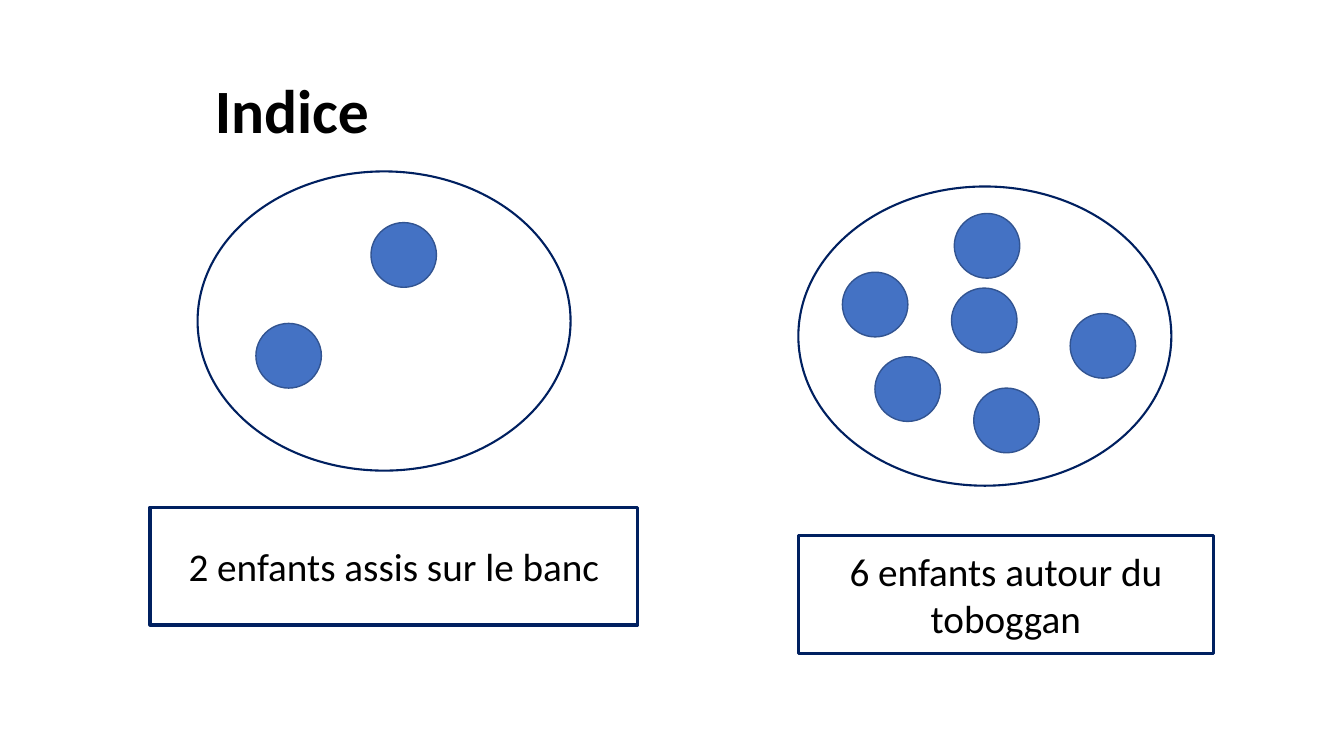
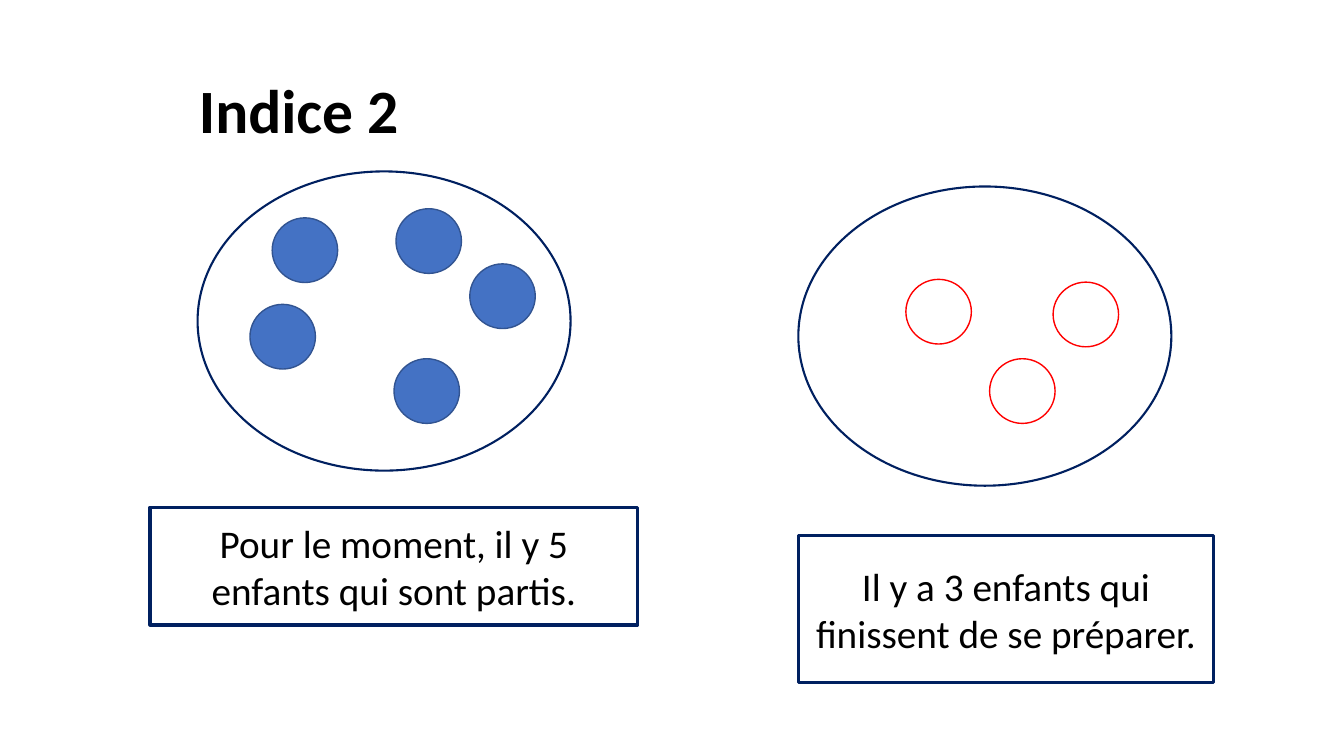
import pptx
import pptx.dml.color
import pptx.enum.shapes
import pptx.enum.text
import pptx.util

Cm = pptx.util.Cm
Pt = pptx.util.Pt
Kind = pptx.enum.shapes.MSO_SHAPE

COLORS = {
    "white": "FFFFFF",
    "black": "000000",
    "navy": "002060",
    "blue": "4472C4",
    "edge": "325491",
    "red": "FF0000",
}
FONT = "Calibri"
DOT = (1.65, 1.63)
RING = (9.4, 7.54)
SIDES = [
    {"ring": (4.98, 4.32), "label": (3.78, 12.78), "width": 12.29},
    {"ring": (20.12, 4.7), "label": (20.12, 13.49), "width": 10.46},
]
PAGES = [
    {
        "title": "Indice",
        "left": 1.99,
        "sets": [
            {
                "text": "2 enfants assis sur le banc",
                "height": 2.97,
                "style": ("blue", "edge"),
                "dots": [(9.35, 5.61), (6.45, 8.15)],
            },
            {
                "text": "6 enfants autour du toboggan",
                "height": 2.97,
                "style": ("blue", "edge"),
                "dots": [(22.05, 8.99), (21.23, 6.86), (24.05, 5.38),
                         (26.97, 7.9), (24.54, 9.78), (23.98, 7.26)],
            },
        ],
    },
    {
        "title": "Indice 2",
        "left": 2.16,
        "sets": [
            {
                "text": "Pour le moment, il y 5 enfants qui sont partis.",
                "height": 2.97,
                "style": ("blue", "edge"),
                "dots": [(6.86, 5.49), (6.3, 7.67), (11.84, 6.65),
                         (9.93, 9.04), (9.98, 5.26)],
            },
            {
                "text": "Il y a 3 enfants qui finissent de se préparer.",
                "height": 3.71,
                "style": ("white", "red"),
                "dots": [(24.94, 9.04), (26.54, 7.11), (22.83, 7.04)],
            },
        ],
    },
]


def draw(slide, kind, spot, size, fill, line, weight):
    shape = slide.shapes.add_shape(kind, *map(Cm, spot + size))
    shape.shadow.inherit = False
    shape.fill.solid()
    shape.fill.fore_color.rgb = pptx.dml.color.RGBColor.from_string(COLORS[fill])
    shape.line.color.rgb = pptx.dml.color.RGBColor.from_string(COLORS[line])
    shape.line.width = Pt(weight)
    return shape


def write(shape, text, size, bold=False):
    frame = shape.text_frame
    frame.word_wrap = True
    frame.vertical_anchor = pptx.enum.text.MSO_ANCHOR.MIDDLE
    frame.text = text
    para = frame.paragraphs[0]
    para.alignment = pptx.enum.text.PP_ALIGN.CENTER
    font = para.runs[0].font
    font.name = FONT
    font.size = Pt(size)
    font.bold = bold
    font.color.rgb = pptx.dml.color.RGBColor.from_string(COLORS["black"])
    return para


deck = pptx.Presentation()
deck.slide_width = Cm(33.87)
deck.slide_height = Cm(19.05)

for page in PAGES:
    slide = deck.slides.add_slide(deck.slide_layouts[6])
    title = slide.shapes.add_textbox(Cm(page["left"]), Cm(1.02), Cm(10.74), Cm(3.68))
    write(title, page["title"], 44, True).line_spacing = 0.9
    for side, group in zip(SIDES, page["sets"]):
        size = (side["width"], group["height"])
        label = draw(slide, Kind.RECTANGLE, side["label"], size, "white", "navy", 2.25)
        write(label, group["text"], 28)
        draw(slide, Kind.OVAL, side["ring"], RING, "white", "navy", 1.5)
        for spot in group["dots"]:
            draw(slide, Kind.OVAL, spot, DOT, *group["style"], 1)

deck.save("out.pptx")
